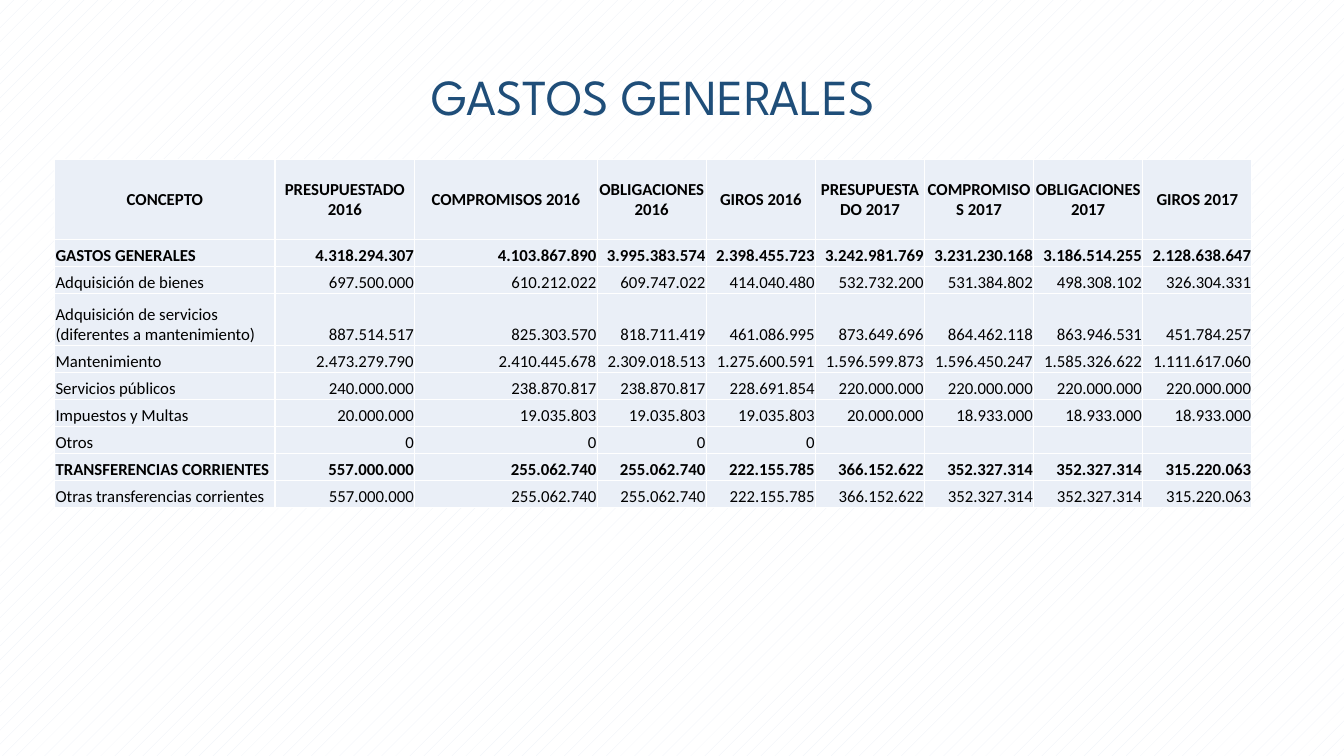
import pptx
import pptx.dml.color
import pptx.enum.dml
import pptx.enum.text
import pptx.oxml
import pptx.oxml.ns
import pptx.util
from lxml import etree

Cm = pptx.util.Cm
Pt = pptx.util.Pt
ALIGN = pptx.enum.text.PP_ALIGN
ANCHOR = pptx.enum.text.MSO_ANCHOR
qn = pptx.oxml.ns.qn

COLORS = {"title": "1F4E79", "text": "000000", "cell": "EAEFF7", "white": "FFFFFF"}

COL_WIDTHS = [5.55, 3.52, 4.6] + [2.75] * 6
HEADER_HEIGHT, ROW_HEIGHT, TALL_HEIGHT = 2.01, 0.68, 1.31
STAGES = ["PRESUPUESTADO", "COMPROMISOS", "OBLIGACIONES", "GIROS"]
HEADER = ["CONCEPTO"] + [f"{stage} {year}" for year in (2016, 2017) for stage in STAGES]
TALL_ROW = "Adquisición de servicios (diferentes a mantenimiento)"
EXPENSES = [
    ("GASTOS GENERALES", 4318294307, 4103867890, 3995383574, 2398455723,
     3242981769, 3231230168, 3186514255, 2128638647),
    ("Adquisición de bienes", 697500000, 610212022, 609747022, 414040480,
     532732200, 531384802, 498308102, 326304331),
    (TALL_ROW, 887514517, 825303570, 818711419, 461086995,
     873649696, 864462118, 863946531, 451784257),
    ("Mantenimiento", 2473279790, 2410445678, 2309018513, 1275600591,
     1596599873, 1596450247, 1585326622, 1111617060),
    ("Servicios públicos", 240000000, 238870817, 238870817, 228691854,
     220000000, 220000000, 220000000, 220000000),
    ("Impuestos y Multas", 20000000, 19035803, 19035803, 19035803,
     20000000, 18933000, 18933000, 18933000),
    ("Otros", 0, 0, 0, 0, None, None, None, None),
    ("TRANSFERENCIAS CORRIENTES", 557000000, 255062740, 255062740, 222155785,
     366152622, 352327314, 352327314, 315220063),
    ("Otras transferencias corrientes", 557000000, 255062740, 255062740, 222155785,
     366152622, 352327314, 352327314, 315220063),
]


def rgb(name):
    return pptx.dml.color.RGBColor.from_string(COLORS[name])


def line_xml(parent, tag, width, color):
    """Append a solid line of the given width in points to parent."""
    ln = etree.SubElement(parent, qn(tag), w=str(Pt(width)))
    fill = etree.SubElement(ln, qn("a:solidFill"))
    etree.SubElement(fill, qn("a:srgbClr"), val=COLORS[color])
    return ln


def write(tf, text, size=12, font="Calibri", color="text", bold=False, align=ALIGN.LEFT):
    p = tf.paragraphs[0]
    p.alignment = align
    if not text:
        etree.SubElement(p._p, qn("a:endParaRPr"), sz=str(size * 100))
        return None
    r = p.add_run()
    r.text = text
    r.font.size = Pt(size)
    r.font.name = font
    r.font.bold = bold
    r.font.color.rgb = rgb(color)
    return r


def add_background(s):
    fill = s.background.fill
    fill.patterned()
    fill.pattern = pptx.enum.dml.MSO_PATTERN.PERCENT_5
    fill.fore_color.rgb = rgb("cell")
    fill.back_color.rgb = rgb("white")


def add_title(s, text):
    sp = s.shapes.add_textbox(Cm(2.24), Cm(1.52), Cm(28.45), Cm(1.8))
    sp.text_frame.word_wrap = True
    r = write(sp.text_frame, text, size=36, font="League Spartan",
              color="title", align=ALIGN.CENTER)
    rpr = r.font._element
    rpr.insert(0, line_xml(rpr, "a:ln", 0.75, "text"))


def format_cell(cell, anchor):
    cell.margin_left = cell.margin_right = cell.margin_top = Cm(0.02)
    cell.margin_bottom = 0
    cell.vertical_anchor = anchor
    tcpr = cell._tc.get_or_add_tcPr()
    for side in ("L", "R", "T", "B"):
        line_xml(tcpr, f"a:ln{side}", 1, "white")
    cell.fill.solid()
    cell.fill.fore_color.rgb = rgb("cell")


def add_expense_table(s):
    rows = len(EXPENSES) + 1
    heights = [HEADER_HEIGHT] + [TALL_HEIGHT if row[0] == TALL_ROW else ROW_HEIGHT
                                 for row in EXPENSES]
    table = s.shapes.add_table(rows, len(HEADER), Cm(1.38), Cm(4.02),
                               Cm(sum(COL_WIDTHS)), Cm(sum(heights))).table
    table.first_row = table.horz_banding = False
    for column, width in zip(table.columns, COL_WIDTHS):
        column.width = Cm(width)
    for row, height in zip(table.rows, heights):
        row.height = Cm(height)

    for j, heading in enumerate(HEADER):
        cell = table.cell(0, j)
        format_cell(cell, ANCHOR.MIDDLE)
        write(cell.text_frame, heading, bold=True, align=ALIGN.CENTER)
    for i, (concept, *amounts) in enumerate(EXPENSES, 1):
        texts = [concept] + ["" if a is None else f"{a:,}".replace(",", ".") for a in amounts]
        for j, text in enumerate(texts):
            cell = table.cell(i, j)
            format_cell(cell, ANCHOR.BOTTOM)
            write(cell.text_frame, text, bold=concept.isupper(),
                  align=ALIGN.RIGHT if j else ALIGN.LEFT)


def main():
    prs = pptx.Presentation()
    prs.slide_width, prs.slide_height = Cm(33.87), Cm(19.05)
    s = prs.slides.add_slide(prs.slide_layouts[6])
    add_background(s)
    add_title(s, "GASTOS GENERALES")
    add_expense_table(s)
    prs.save("out.pptx")


if __name__ == "__main__":
    main()
